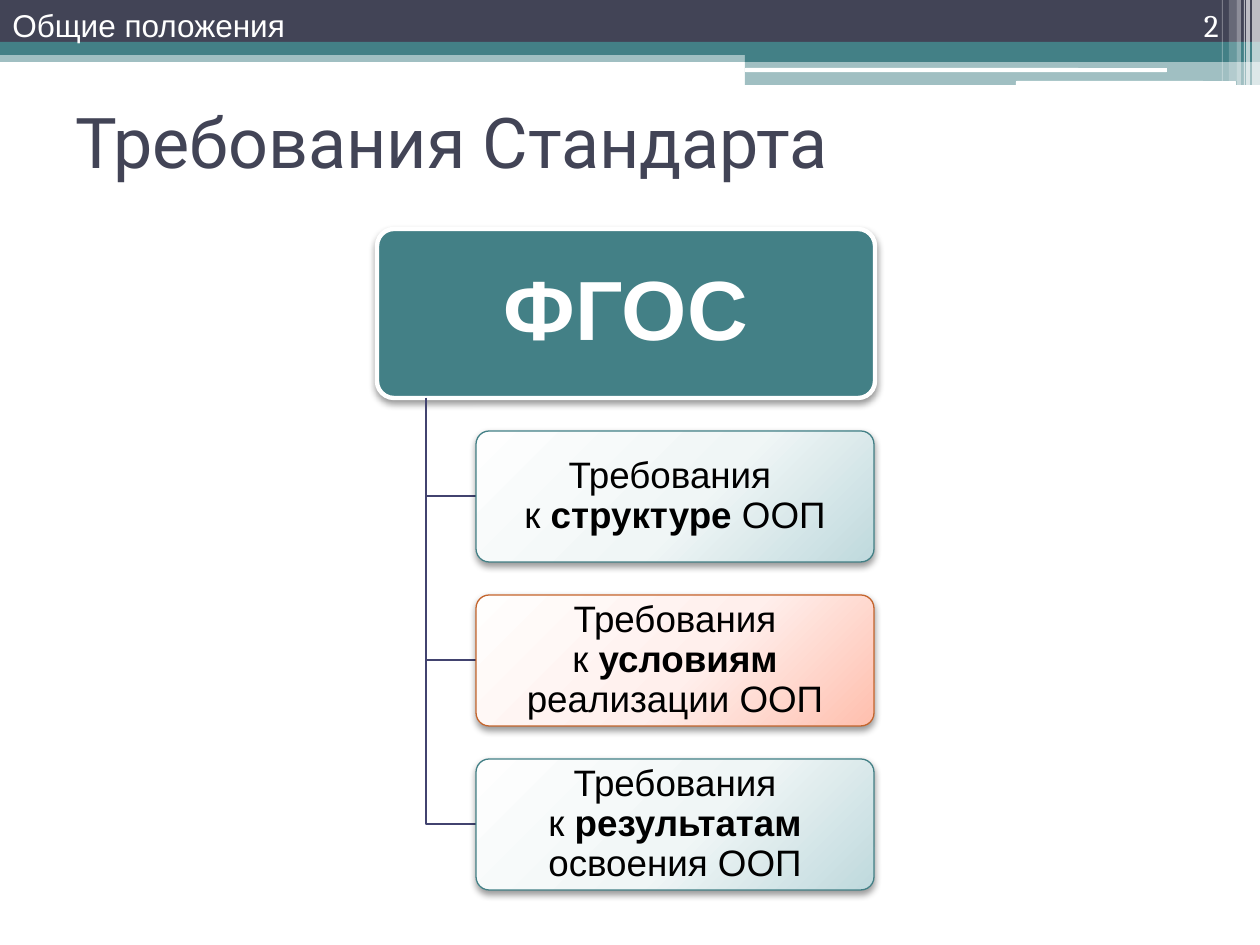
from lxml.etree import SubElement
from pptx import Presentation
from pptx.dml.color import RGBColor
from pptx.enum.shapes import MSO_SHAPE
from pptx.enum.text import MSO_ANCHOR, PP_ALIGN
from pptx.oxml import parse_xml
from pptx.oxml.ns import nsdecls, qn
from pptx.util import Pt

EMU_PER_PX = 914400 / 126
TEAL, DARK, WHITE, BLACK = "438086", "424456", "FFFFFF", "000000"
LINK = "42436F"
TEAL_GRADIENT = [(0, "FEFEFE"), (55, "F0F6F6"), (100, "BFD9DD")]
RED_GRADIENT = [(0, "FFFEFD"), (55, "FFEFEC"), (100, "FFBFAE")]

# left, top, width, height, colour, opacity in percent
BARS = [
    (0, 50, 1260, 12, TEAL, 50),
    (0, 0, 1260, 42, DARK, 100),
    (0, 42, 1260, 13, TEAL, 100),
    (745, 49, 515, 13, TEAL, 100),
    (745, 61, 515, 24, TEAL, 50),
]
ROUND_BARS = [(745, 68, 422, 4, WHITE, 100), (1016, 81, 220, 5, WHITE, 100)]
STRIPES = [
    (1252, 0, 8, 85, WHITE, 65),
    (1246, 0, 4, 85, WHITE, 65),
    (1244, 0, 1, 85, WHITE, 60),
    (1237, 0, 4, 85, WHITE, 40),
    (1229, 0, 8, 81, WHITE, 20),
    (1222, 0, 1, 81, WHITE, 30),
]
# runs as (text, bold), gradient, outline
REQUIREMENTS = [
    ([("Требования \nк", False), (" структуре", True), (" ООП", False)],
     TEAL_GRADIENT, TEAL),
    ([("Требования\nк", False), (" условиям ", True), ("реализации ООП", False)],
     RED_GRADIENT, "C4652D"),
    ([("Требования\nк ", False), ("результатам", True), (" освоения ООП", False)],
     TEAL_GRADIENT, TEAL),
]
PARENT = (377, 229, 498, 169)
CHILD_LEFT, CHILD_TOP, CHILD_WIDTH, CHILD_HEIGHT, CHILD_STEP = 476, 431, 398, 131, 164
TRUNK_LEFT = 426


def px(value):
    return round(value * EMU_PER_PX)


def color(value):
    return RGBColor.from_string(value)


def add_block(slide, box, fill=None, opacity=100, preset=MSO_SHAPE.RECTANGLE,
              line=None, line_width=0.75):
    shape = slide.shapes.add_shape(preset, *map(px, box))
    shape.shadow.inherit = False
    if fill:
        shape.fill.solid()
        shape.fill.fore_color.rgb = color(fill)
        if opacity < 100:
            choice = shape.fill._xPr.find(qn("a:solidFill"))[0]
            SubElement(choice, qn("a:alpha"), val=str(opacity * 1000))
    if line:
        shape.line.color.rgb = color(line)
        shape.line.width = Pt(line_width)
    else:
        shape.line.fill.background()
    return shape


def add_card(slide, box, **style):
    """Rounded block with a soft shadow below it."""
    shape = add_block(slide, box, preset=MSO_SHAPE.ROUNDED_RECTANGLE, **style)
    shape.adjustments[0] = 0.1
    effects = shape._element.spPr.find(qn("a:effectLst"))
    effects.append(parse_xml(
        f'<a:outerShdw {nsdecls("a")} blurRad="{Pt(4.1)}" dist="{Pt(2)}" dir="5400000" '
        'rotWithShape="0"><a:srgbClr val="000000"><a:alpha val="40000"/></a:srgbClr>'
        '</a:outerShdw>'))
    return shape


def set_radial_gradient(shape, stops):
    """Gradient spreading from a point beyond the top left corner."""
    stop_xml = "".join(
        f'<a:gs pos="{position * 1000}"><a:srgbClr val="{value}"/></a:gs>'
        for position, value in stops)
    gradient = parse_xml(
        f'<a:gradFill {nsdecls("a")} rotWithShape="1"><a:gsLst>{stop_xml}</a:gsLst>'
        '<a:path path="circle"><a:fillToRect l="-40000" t="-90000" r="140000" b="190000"/>'
        '</a:path></a:gradFill>')
    shape._element.spPr.find(qn("a:prstGeom")).addnext(gradient)


def write_text(shape, runs, size, font="Arial", fill=BLACK, align=PP_ALIGN.LEFT,
               anchor=MSO_ANCHOR.TOP, spacing=None, wrap=True, insets=None):
    """Fill a shape with one paragraph of (text, bold) runs; \\n breaks the line."""
    frame = shape.text_frame
    frame.word_wrap = wrap
    frame.vertical_anchor = anchor
    if insets:
        frame.margin_left = frame.margin_right = px(insets[0])
        frame.margin_top = frame.margin_bottom = px(insets[1])
    paragraph = frame.paragraphs[0]
    paragraph.alignment = align
    paragraph.line_spacing = spacing
    for text, bold in runs:
        for index, part in enumerate(text.split("\n")):
            if index:
                paragraph.add_line_break()
            run = paragraph.add_run()
            run.text = part
            run.font.name = font
            run.font.size = Pt(size)
            run.font.bold = bold
            run.font.color.rgb = color(fill)


def add_label(slide, box, text, **style):
    shape = slide.shapes.add_textbox(*map(px, box))
    write_text(shape, [(text, False)], **style)


def add_branch(slide, start_y, end_y):
    """Elbow line from the parent card down and across to a child card."""
    builder = slide.shapes.build_freeform(px(TRUNK_LEFT), px(start_y))
    builder.add_line_segments(
        [(px(TRUNK_LEFT), px(end_y)), (px(CHILD_LEFT), px(end_y))], close=False)
    branch = builder.convert_to_shape()
    branch.shadow.inherit = False
    branch.fill.background()
    branch.line.color.rgb = color(LINK)
    branch.line.width = Pt(1.5)


def add_header(slide):
    for bars, preset in ((BARS, MSO_SHAPE.RECTANGLE),
                         (ROUND_BARS, MSO_SHAPE.ROUNDED_RECTANGLE),
                         (STRIPES, MSO_SHAPE.RECTANGLE)):
        for *box, fill, opacity in bars:
            add_block(slide, box, fill, opacity, preset)


def add_hierarchy(slide):
    centered = dict(align=PP_ALIGN.CENTER, anchor=MSO_ANCHOR.MIDDLE, spacing=0.9)
    parent = add_card(slide, PARENT, fill=TEAL, line=WHITE, line_width=2.5)
    write_text(parent, [("ФГОС", True)], 48, fill=WHITE, insets=(13, 9), **centered)
    parent_bottom = PARENT[1] + PARENT[3]
    for index, (runs, gradient, outline) in enumerate(REQUIREMENTS):
        top = CHILD_TOP + index * CHILD_STEP
        add_branch(slide, parent_bottom, top + CHILD_HEIGHT // 2)
        card = add_card(slide, (CHILD_LEFT, top, CHILD_WIDTH, CHILD_HEIGHT), line=outline)
        set_radial_gradient(card, gradient)
        write_text(card, runs, 21, insets=(5, 4), **centered)


def main():
    presentation = Presentation()
    presentation.slide_width, presentation.slide_height = px(1260), px(945)
    slide = presentation.slides.add_slide(presentation.slide_layouts[6])
    add_header(slide)
    add_label(slide, (63, 66, 1134, 149), "Требования Стандарта", size=40,
              font="Roboto", fill=DARK, anchor=MSO_ANCHOR.MIDDLE)
    add_label(slide, (1126, 0, 105, 50), "2", size=18, font="Cambria", fill=WHITE,
              align=PP_ALIGN.RIGHT, anchor=MSO_ANCHOR.BOTTOM)
    add_hierarchy(slide)
    add_label(slide, (0, 0, 305, 50), "Общие положения", size=18, fill=WHITE, wrap=False)
    presentation.save("out.pptx")


if __name__ == "__main__":
    main()
